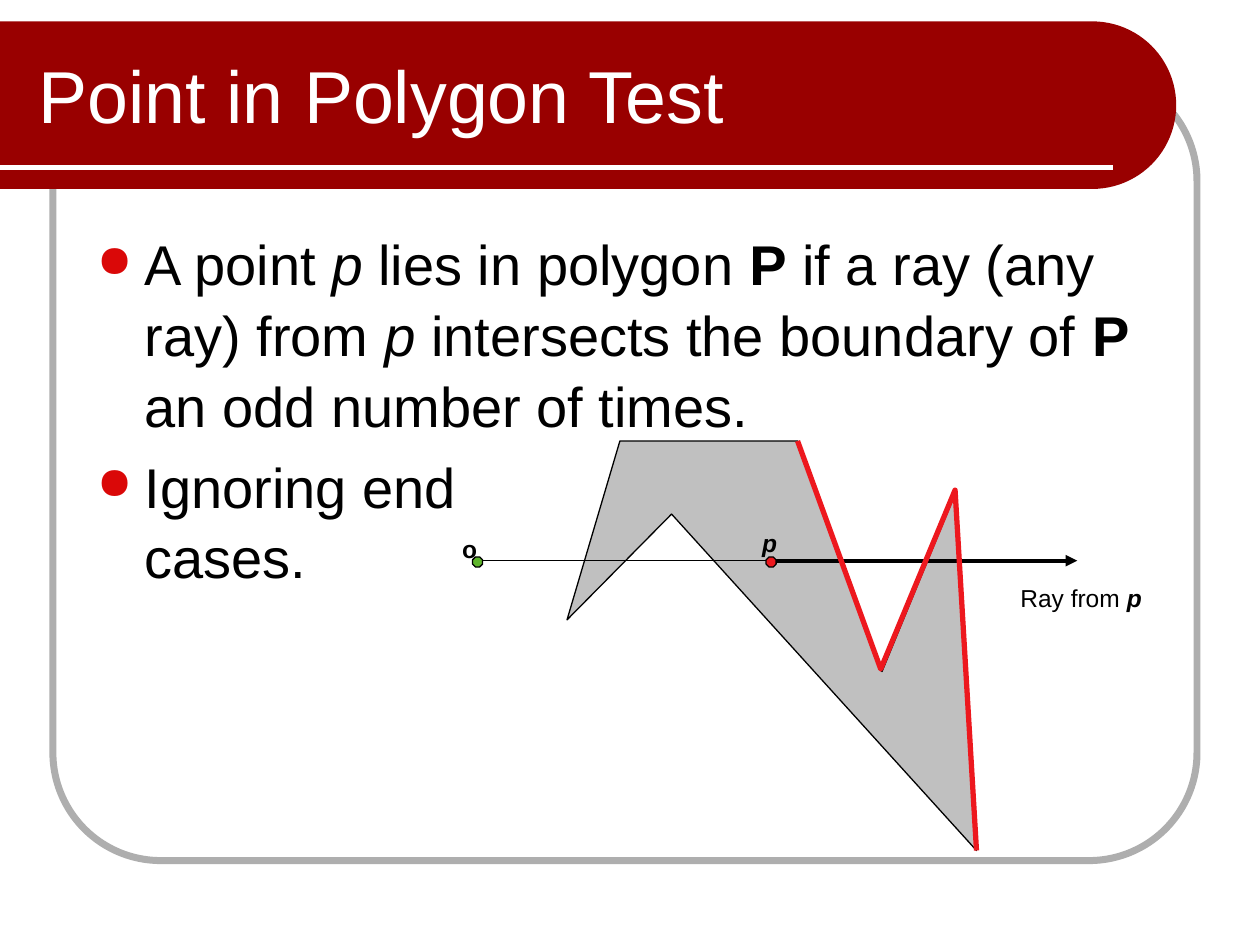
from math import cos, pi, sin

from lxml.etree import SubElement
from pptx import Presentation
from pptx.dml.color import RGBColor
from pptx.enum.shapes import MSO_CONNECTOR, MSO_SHAPE
from pptx.enum.text import MSO_ANCHOR
from pptx.oxml.ns import qn
from pptx.util import Inches, Pt

RED = "ED181E"
BLACK = "000000"


def color(value):
    return RGBColor.from_string(value)


def style(shape, fill=None, line=None, weight=0.75):
    shape.shadow.inherit = False
    if fill:
        shape.fill.solid()
        shape.fill.fore_color.rgb = color(fill)
    else:
        shape.fill.background()
    if line:
        shape.line.color.rgb = color(line)
        shape.line.width = Pt(weight)
    else:
        shape.line.fill.background()


def add_outline(page, points, closed=True, **look):
    corners = [(Inches(x), Inches(y)) for x, y in points]
    builder = page.shapes.build_freeform(*corners[0])
    builder.add_line_segments(corners[1:], close=closed)
    style(builder.convert_to_shape(), **look)


def add_preset(page, kind, left, top, width, height, **look):
    shape = page.shapes.add_shape(
        kind, Inches(left), Inches(top), Inches(width), Inches(height))
    style(shape, **look)
    return shape


def add_line(page, start, end, height, line, weight, arrow=False):
    """Draw a horizontal line from start to end."""
    connector = page.shapes.add_connector(
        MSO_CONNECTOR.STRAIGHT,
        Inches(start), Inches(height), Inches(end), Inches(height))
    connector.line.color.rgb = color(line)
    connector.line.width = Pt(weight)
    properties = connector._element.spPr
    if arrow:
        SubElement(properties.find(qn("a:ln")), qn("a:tailEnd"), type="triangle")
    SubElement(properties, qn("a:effectLst"))


def add_text_frame(page, left, top, width, height, wrap=True):
    box = page.shapes.add_textbox(
        Inches(left), Inches(top), Inches(width), Inches(height))
    box.text_frame.word_wrap = wrap
    return box.text_frame


def write(paragraph, spans, size, ink=BLACK):
    """Fill a paragraph from (text, marks) pairs; marks hold b and i."""
    paragraph.font.name = "Arial"
    paragraph.font.size = Pt(size)
    paragraph.font.color.rgb = color(ink)
    for text, marks in spans:
        for number, row in enumerate(text.split("\n")):
            if number:
                paragraph.add_line_break()
            span = paragraph.add_run()
            span.text = row
            if "b" in marks:
                span.font.bold = True
            if "i" in marks:
                span.font.italic = True


def add_bullet(paragraph):
    properties = paragraph._p.get_or_add_pPr()
    properties.set("marL", str(Inches(0.38)))
    properties.set("indent", str(-Inches(0.38)))
    bullet_color = SubElement(properties, qn("a:buClr"))
    SubElement(bullet_color, qn("a:srgbClr"), val="DA0808")
    SubElement(properties, qn("a:buSzPct"), val="80000")
    SubElement(properties, qn("a:buChar"), char="●")


def add_label(page, left, top, width, spans):
    frame = add_text_frame(page, left, top, width, 0.33, wrap=False)
    write(frame.paragraphs[0], spans, 14)


def add_frame(page):
    border = add_preset(page, MSO_SHAPE.ROUNDED_RECTANGLE, 0.42, 0.58, 9.08, 6.25,
                        line="AEAEAE", weight=4)
    border.adjustments[0] = 0.137
    radius, steps = 0.665, 48
    angles = [pi * step / steps - pi / 2 for step in range(steps + 1)]
    cap = [(8.67 + radius * cos(angle), 0.835 + radius * sin(angle)) for angle in angles]
    add_outline(page, [(0, 0.17), *cap, (0, 1.5)], fill="990000")
    add_line(page, 0, 8.83, 1.33, "FFFFFF", 3)


def add_title(page, text):
    frame = add_text_frame(page, 0.21, 0.25, 7.79, 1)
    frame.vertical_anchor = MSO_ANCHOR.MIDDLE
    write(frame.paragraphs[0], [(text, "")], 42, "FFFFFF")


def add_body(page, items):
    frame = add_text_frame(page, 0.67, 1.75, 8.67, 4.83)
    for number, spans in enumerate(items):
        paragraph = frame.add_paragraph() if number else frame.paragraphs[0]
        paragraph.line_spacing = 1.05
        if number:
            paragraph.space_before = Pt(6)
        add_bullet(paragraph)
        write(paragraph, spans, 32)


def add_diagram(page):
    polygon = [(4.5, 4.92), (4.92, 3.5), (6.33, 3.5), (7, 5.33),
               (7.58, 3.92), (7.75, 6.75), (5.33, 4.08)]
    add_outline(page, polygon, fill="C0C0C0", line=BLACK)
    add_line(page, 3.8, 6.13, 4.45, BLACK, 0.75)
    add_line(page, 6.14, 8.55, 4.45, BLACK, 2.25, arrow=True)
    for left, fill in ((3.75, "5EB52B"), (6.08, RED)):
        add_preset(page, MSO_SHAPE.OCTAGON, left, 4.42, 0.08, 0.08, fill=fill, line=BLACK)
    add_label(page, 8, 4.58, 1.33, [("Ray from ", ""), ("p", "bi")])
    add_label(page, 3.57, 4.19, 0.31, [("o", "b")])
    add_label(page, 5.95, 4.14, 0.31, [("p", "bi")])
    crossed_edges = [(6.33, 3.5), (6.99, 5.31), (7.58, 3.89), (7.75, 6.75)]
    add_outline(page, crossed_edges, closed=False, line=RED, weight=3)


def main():
    deck = Presentation()
    deck.slide_width, deck.slide_height = Inches(10), Inches(7.5)
    page = deck.slides.add_slide(deck.slide_layouts[6])
    add_frame(page)
    add_title(page, "Point in Polygon Test")
    add_body(page, [
        [("A point ", ""), ("p", "i"), (" lies in polygon ", ""), ("P", "b"),
         (" if a ray (any ray) from ", ""), ("p", "i"),
         (" intersects the boundary of ", ""), ("P", "b"),
         (" an odd number of times.", "")],
        [("Ignoring end\ncases.", "")],
    ])
    add_diagram(page)
    deck.save("out.pptx")


if __name__ == "__main__":
    main()
